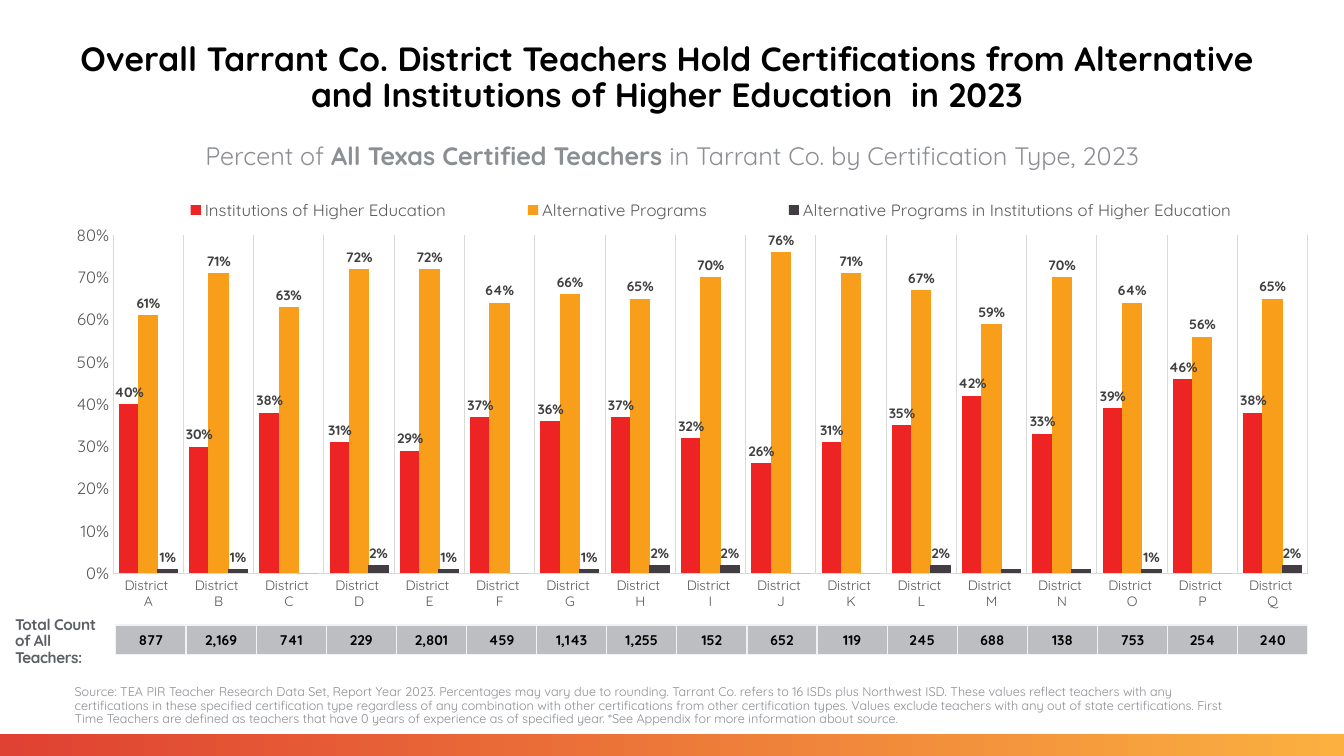
import pptx
import pptx.chart.data
import pptx.dml.color
import pptx.enum.chart
import pptx.enum.shapes
import pptx.enum.text
import pptx.oxml
import pptx.oxml.ns
import pptx.util
from pptx.util import Cm

FONT = "Quicksand"
CENTER = pptx.enum.text.PP_ALIGN.CENTER
LEFT = pptx.enum.text.PP_ALIGN.LEFT
MIDDLE = pptx.enum.text.MSO_ANCHOR.MIDDLE
TOP = pptx.enum.text.MSO_ANCHOR.TOP

TITLE = ("Overall Tarrant Co. District Teachers Hold Certifications from Alternative "
         "and Institutions of Higher Education  in 2023")
SOURCE = ("Source: TEA PIR Teacher Research Data Set, Report Year 2023. Percentages may vary due to "
          "rounding. Tarrant Co. refers to 16 ISDs plus Northwest ISD. These values reflect teachers "
          "with any certifications in these specified certification type regardless of any combination "
          "with other certifications from other certification types. Values exclude teachers with any "
          "out of state certifications. First Time Teachers are defined as teachers that have 0 years "
          "of experience as of specified year. *See Appendix for more information about source.")

DISTRICTS = [f"District \n{letter}" for letter in "ABCDEFGHIJKLMNOPQ"]
# Name, colour, percentages, districts whose label is left off
SERIES = [
    ("Institutions of Higher Education", "ED2324",
     [40, 30, 38, 31, 29, 37, 36, 37, 32, 26, 31, 35, 42, 33, 39, 46, 38], []),
    ("Alternative Programs", "F89E1B",
     [61, 71, 63, 72, 72, 64, 66, 65, 70, 76, 71, 67, 59, 70, 64, 56, 65], []),
    ("Alternative Programs in Institutions of Higher Education", "423D42",
     [1, 1, 0, 2, 1, 0, 1, 2, 2, 0, 0, 2, 1, 1, 1, 0, 2], [2, 5, 9, 10, 12, 13, 15]),
]
TEACHER_COUNTS = ["877", "2,169", "741", "229", "2,801", "459", "1,143", "1,255", "152",
                  "652", "119", "245", "688", "138", "753", "254", "240"]


def rgb(code):
    return pptx.dml.color.RGBColor.from_string(code)


def style_font(font, size, color, bold=False):
    font.name = FONT
    font.size = pptx.util.Pt(size)
    font.bold = bold
    font.color.rgb = rgb(color)


def place(box, left, top, width, height):
    box.left, box.top, box.width, box.height = Cm(left), Cm(top), Cm(width), Cm(height)


def write_text(box, spans, size, color, align=LEFT, anchor=MIDDLE):
    """Fill a box with one paragraph of (text, bold) spans."""
    frame = box.text_frame
    frame.word_wrap = True
    frame.auto_size = pptx.enum.text.MSO_AUTO_SIZE.NONE
    frame.vertical_anchor = anchor
    para = frame.paragraphs[0]
    para.alignment = align
    para.line_spacing = 0.9
    para.space_before = pptx.util.Pt(0)
    for text, bold in spans:
        span = para.add_run()
        span.text = text
        style_font(span.font, size, color, bold)


def add_text(page, area, *args, **options):
    box = page.shapes.add_textbox(0, 0, 0, 0)
    place(box, *area)
    write_text(box, *args, **options)
    return box


def add_gradient_band(page, area, start, end):
    band = page.shapes.add_shape(pptx.enum.shapes.MSO_SHAPE.RECTANGLE, 0, 0, 0, 0)
    place(band, *area)
    band.shadow.inherit = False
    band.line.fill.background()
    band.fill.gradient()
    band.fill.gradient_angle = 0
    for stop, color, position in zip(band.fill.gradient_stops, (start, end), (0, 1)):
        stop.color.rgb = rgb(color)
        stop.position = position


def set_layout(parent, position, left, top, width, height, inner=False):
    """Give a chart part a fixed place, in fractions of the chart."""
    for old in parent.findall(pptx.oxml.ns.qn("c:layout")):
        parent.remove(old)
    target = '<c:layoutTarget val="inner"/>' if inner else ""
    parent.insert(position, pptx.oxml.parse_xml(
        f'<c:layout {pptx.oxml.ns.nsdecls("c")}><c:manualLayout>{target}'
        '<c:xMode val="edge"/><c:yMode val="edge"/>'
        f'<c:x val="{left}"/><c:y val="{top}"/><c:w val="{width}"/><c:h val="{height}"/>'
        '</c:manualLayout></c:layout>'))


def style_axes(chart):
    marks = pptx.enum.chart.XL_TICK_MARK.NONE
    for axis, size in ((chart.category_axis, 10), (chart.value_axis, 12)):
        axis.major_tick_mark = axis.minor_tick_mark = marks
        style_font(axis.tick_labels.font, size, "595959")
    districts, percents = chart.category_axis, chart.value_axis
    districts.has_major_gridlines = True
    for line in (districts.format.line, districts.major_gridlines.format.line):
        line.color.rgb = rgb("D9D9D9")
        line.width = pptx.util.Pt(0.75)
    percents.has_major_gridlines = False
    percents.format.line.fill.background()
    percents.minimum_scale, percents.maximum_scale, percents.major_unit = 0, 0.8, 0.1
    percents.tick_labels.number_format = "0%"
    percents.tick_labels.number_format_is_linked = False


def style_series(series, color, unlabelled):
    series.format.fill.solid()
    series.format.fill.fore_color.rgb = rgb(color)
    series.invert_if_negative = False
    labels = series.data_labels
    labels.show_value = True
    labels.number_format = "0%"
    labels.number_format_is_linked = False
    labels.position = pptx.enum.chart.XL_LABEL_POSITION.OUTSIDE_END
    style_font(labels.font, 10, "404040", True)
    group = series.data_labels._element
    for place_in_list, index in enumerate(unlabelled):
        group.insert(place_in_list, pptx.oxml.parse_xml(
            f'<c:dLbl {pptx.oxml.ns.nsdecls("c")}><c:idx val="{index}"/>'
            '<c:delete val="1"/></c:dLbl>'))


def add_certification_chart(page, area):
    data = pptx.chart.data.CategoryChartData(number_format="0%")
    data.categories = DISTRICTS
    for name, _, percents, _ in SERIES:
        data.add_series(name, [percent / 100 for percent in percents])
    chart = page.shapes.add_chart(pptx.enum.chart.XL_CHART_TYPE.COLUMN_CLUSTERED,
                                  *[Cm(length) for length in area], data).chart
    chart.has_title = False
    style_font(chart.font, 10, "000000")
    style_axes(chart)
    plot = chart.plots[0]
    plot.gap_width, plot.overlap, plot.vary_by_categories = 56, 5, False
    for series, (_, color, _, unlabelled) in zip(plot.series, SERIES):
        style_series(series, color, unlabelled)
    chart.has_legend = True
    chart.legend.position = pptx.enum.chart.XL_LEGEND_POSITION.BOTTOM
    chart.legend.include_in_layout = False
    style_font(chart.legend.font, 12, "595959")
    set_layout(chart.legend._element, 1, 0.04, 0.01, 0.96, 0.07)
    plot_area = chart._chartSpace.find(".//" + pptx.oxml.ns.qn("c:plotArea"))
    set_layout(plot_area, 0, 0.039, 0.107, 0.961, 0.833, inner=True)


def add_count_table(page, left, top, width, height):
    table = page.shapes.add_table(1, len(TEACHER_COUNTS), Cm(left), Cm(top),
                                  Cm(width), Cm(height)).table
    table.first_row = table.horz_banding = False
    for column, cell, count in zip(table.columns, table.rows[0].cells, TEACHER_COUNTS):
        column.width = Cm(width / len(TEACHER_COUNTS))
        for side in "LRTB":
            cell._tc.get_or_add_tcPr().append(pptx.oxml.parse_xml(
                f'<a:ln{side} {pptx.oxml.ns.nsdecls("a")} w="12700"><a:solidFill>'
                f'<a:srgbClr val="F2F2F2"/></a:solidFill></a:ln{side}>'))
        cell.fill.solid()
        cell.fill.fore_color.rgb = rgb("BCBEC1")
        cell.margin_left = cell.margin_right = cell.margin_top = Cm(0.03)
        cell.margin_bottom = 0
        cell.vertical_anchor = MIDDLE
        cell.text_frame.text = count
        para = cell.text_frame.paragraphs[0]
        para.alignment = CENTER
        style_font(para.runs[0].font, 10, "000000", True)


def main():
    deck = pptx.Presentation()
    deck.slide_width, deck.slide_height = Cm(33.87), Cm(19.05)
    page = deck.slides.add_slide(deck.slide_layouts[5])

    # Bottom band and headings
    add_gradient_band(page, (0, 18.49, 33.87, 0.56), "DF4132", "FBB040")
    place(page.shapes.title, 1.63, 0.91, 30.35, 2.13)
    write_text(page.shapes.title, [(TITLE, True)], 24, "000000", CENTER)
    add_text(page, (1.3, 3.48, 31.29, 0.97),
             [("Percent of ", False), ("All Texas Certified Teachers ", True),
              ("in Tarrant Co. by Certification Type, 2023", False)], 18, "8B8E93", CENTER)

    # Chart with the teacher counts beneath
    add_certification_chart(page, (1.63, 4.83, 31.34, 10.54))
    add_count_table(page, 2.92, 15.75, 30.05, 0.74)
    caption = add_text(page, (0.23, 15.6, 2.79, 1.14),
                       [("Total Count of All Teachers:", True)], 11, "5C5F63")
    frame = caption.text_frame
    frame.margin_left = frame.margin_right = frame.margin_top = frame.margin_bottom = Cm(0.15)
    frame.paragraphs[0].runs[0].font._element.set("spc", "-30")

    # Source note
    add_text(page, (1.63, 17.15, 29.85, 1.9), [(SOURCE, False)], 9, "8B8E93", anchor=TOP)
    deck.save("out.pptx")


if __name__ == "__main__":
    main()
